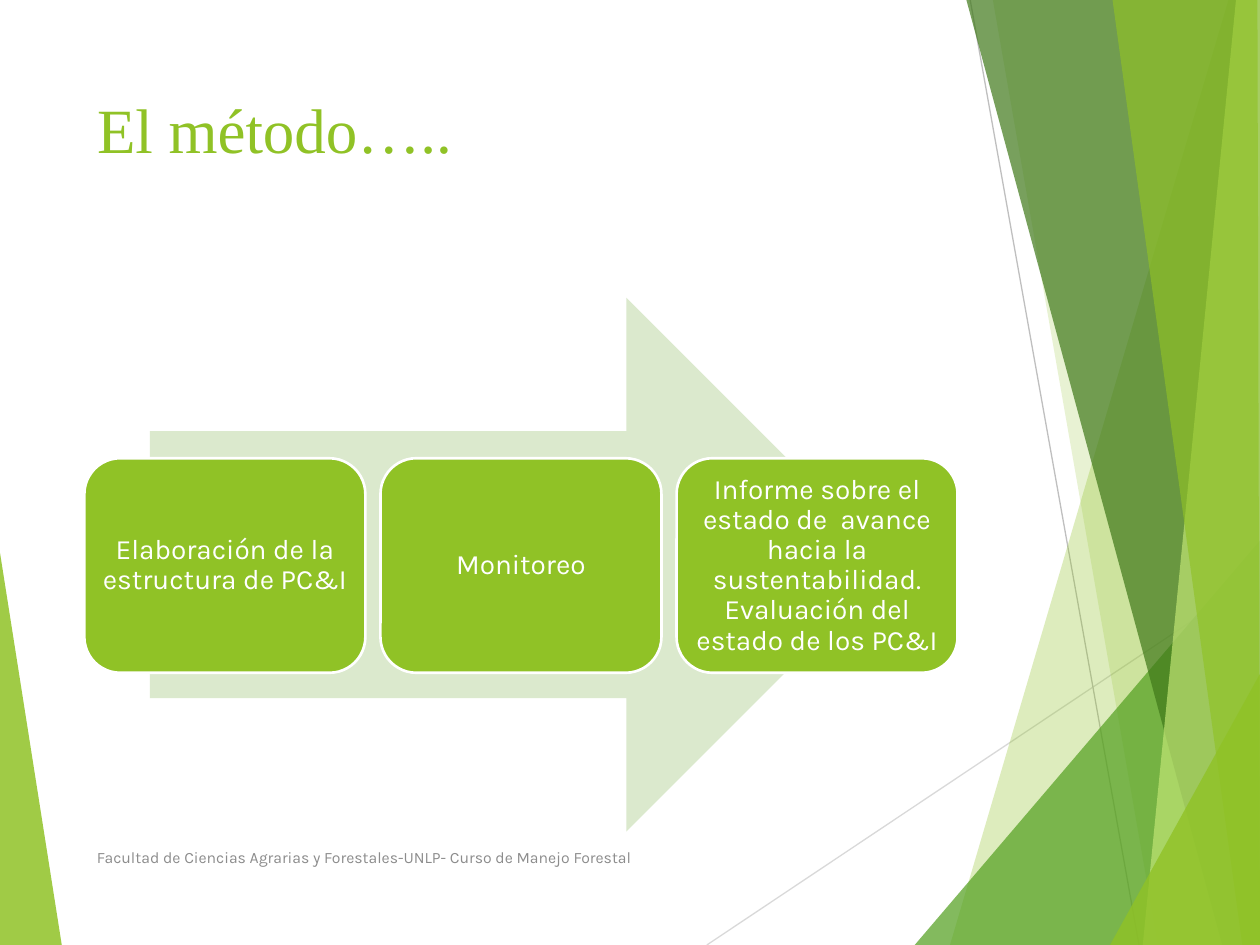
from lxml.etree import SubElement
from pptx import Presentation
from pptx.dml.color import RGBColor
from pptx.enum.shapes import MSO_CONNECTOR, MSO_SHAPE
from pptx.enum.text import MSO_ANCHOR, MSO_AUTO_SIZE, PP_ALIGN
from pptx.oxml.ns import qn
from pptx.util import Inches, Pt

WIDTH, HEIGHT = Inches(10), Inches(7.5)
GREEN, WHITE = "90C226", "FFFFFF"
FACETS = [
    ([(0, 58.5), (4.9, 100), (0, 100)], GREEN, 85),
    ([(97.5, 0), (75.4, 100), (100, 100), (100, 0)], GREEN, 30),
    ([(78.8, 0), (91.9, 100), (100, 100), (100, 0)], GREEN, 20),
    ([(72.6, 100), (100, 57.2), (100, 100)], "54A021", 72),
    ([(76.7, 0), (97, 100), (100, 100), (100, 0)], "3F7819", 70),
    ([(98.1, 0), (90.7, 100), (100, 100), (100, 0)], "C0E474", 70),
    ([(88.3, 0), (98.6, 100), (100, 100), (99.8, 0)], GREEN, 65),
    ([(88.1, 100), (100, 71.3), (100, 100)], GREEN, 80),
]
RAYS = [((56.1, 100), (100, 60.9), "D9D9D9"), ((77, 0), (90.4, 100), "BFBFBF")]
STEPS = [
    "Elaboración de la estructura de PC&I",
    "Monitoreo",
    "Informe sobre el estado de  avance hacia la sustentabilidad. "
    "Evaluación del estado de los PC&I",
]
CARD_LEFT, CARD_PITCH = 6.7, 23.5


def rgb(value):
    return RGBColor.from_string(value)


def share(x, y):
    return int(WIDTH * x / 100), int(HEIGHT * y / 100)


def box(x, y, w, h):
    return *share(x, y), *share(w, h)


def apply(target, formats):
    for name, value in formats.items():
        setattr(target, name, value)


def paint(sp, color, opacity=100, outline=None):
    sp.shadow.inherit = False
    sp.fill.solid()
    sp.fill.fore_color.rgb = rgb(color)
    if opacity < 100:
        clr = sp.fill._xPr.find(qn("a:solidFill"))[0]
        SubElement(clr, qn("a:alpha"), val=str(opacity * 1000))
    if outline:
        sp.line.color.rgb = rgb(outline)
        sp.line.width = Pt(1.5)
    else:
        sp.line.fill.background()


def write(sp, text, font, size, color, frame=None, para=None):
    tf = sp.text_frame
    apply(tf, {"word_wrap": True, "auto_size": MSO_AUTO_SIZE.NONE, **(frame or {})})
    p = tf.paragraphs[0]
    apply(p, {"alignment": PP_ALIGN.LEFT, **(para or {})})
    r = p.add_run()
    r.text = text
    apply(r.font, {"name": font, "size": Pt(size), "bold": False})
    r.font.color.rgb = rgb(color)


def add_facet(s, points, color, opacity):
    start, *rest = [share(*point) for point in points]
    builder = s.shapes.build_freeform(*start)
    builder.add_line_segments(rest, close=True)
    paint(builder.convert_to_shape(), color, opacity)


def add_ray(s, start, end, color):
    ray = s.shapes.add_connector(MSO_CONNECTOR.STRAIGHT, *share(*start), *share(*end))
    ray.line.color.rgb = rgb(color)
    ray.line.width = Pt(0.75)
    SubElement(ray._element.spPr, qn("a:effectLst"))


def add_title(s, text):
    title = s.shapes.title
    apply(title, dict(zip(("left", "top", "width", "height"), box(6.7, 8.9, 69.4, 19.2))))
    write(title, text, "Times New Roman", 36, GREEN, {"vertical_anchor": MSO_ANCHOR.TOP})


def add_arrow(s):
    paint(s.shapes.add_shape(MSO_SHAPE.RIGHT_ARROW, *box(11.9, 31.5, 59, 56.5)), "DBE9CD")


def add_card(s, column, text):
    left = CARD_LEFT + column * CARD_PITCH
    card = s.shapes.add_shape(MSO_SHAPE.ROUNDED_RECTANGLE, *box(left, 48.5, 22.3, 22.7))
    paint(card, GREEN, outline=WHITE)
    margins = dict.fromkeys(("margin_left", "margin_right"), Inches(0.06))
    margins |= dict.fromkeys(("margin_top", "margin_bottom"), Inches(0.07))
    write(card, text, "Karla", 16, WHITE,
          {"vertical_anchor": MSO_ANCHOR.MIDDLE, **margins},
          {"alignment": PP_ALIGN.CENTER, "line_spacing": 0.9, "space_after": Pt(5.6)})


def add_footer(s, text):
    footer = s.shapes.add_textbox(*box(6.7, 88.1, 50.6, 5.3))
    write(footer, text, "Karla", 9, "8C8C8C", {"vertical_anchor": MSO_ANCHOR.MIDDLE})


def main():
    prs = Presentation()
    prs.slide_width, prs.slide_height = WIDTH, HEIGHT
    s = prs.slides.add_slide(prs.slide_layouts[5])
    add_facet(s, *FACETS[0])
    for ray in RAYS:
        add_ray(s, *ray)
    for facet in FACETS[1:]:
        add_facet(s, *facet)
    add_title(s, "El método…..")
    add_arrow(s)
    for column, text in enumerate(STEPS):
        add_card(s, column, text)
    add_footer(s, "Facultad de Ciencias Agrarias y Forestales-UNLP- Curso de Manejo Forestal")
    prs.save("out.pptx")


if __name__ == "__main__":
    main()
